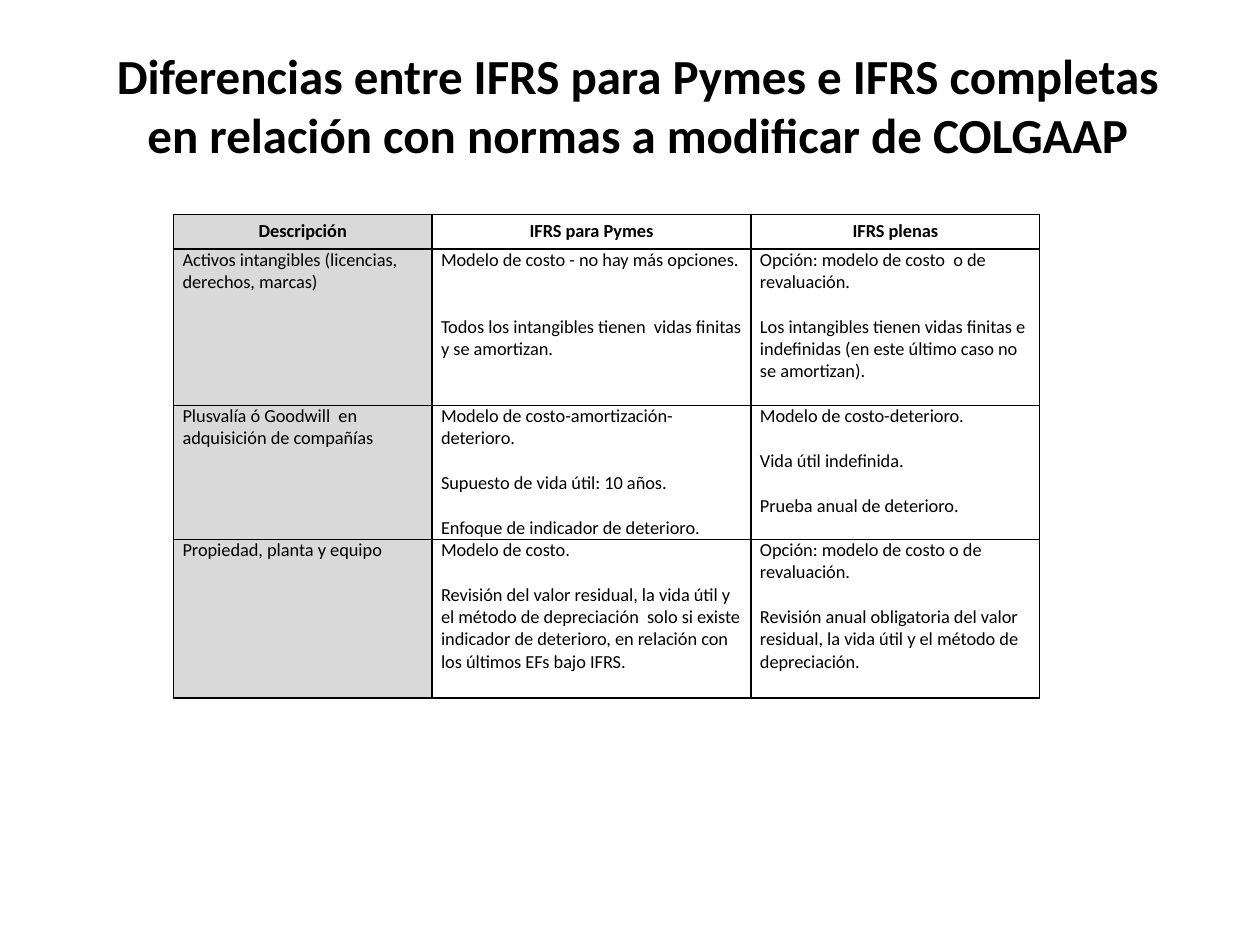
from dataclasses import dataclass

from lxml.etree import SubElement
from pptx import Presentation
from pptx.dml.color import RGBColor
from pptx.enum.text import MSO_ANCHOR, MSO_AUTO_SIZE, PP_ALIGN
from pptx.oxml.ns import qn
from pptx.util import Cm, Pt


@dataclass(frozen=True)
class Theme:
    font: str = "Calibri"
    ink: RGBColor = RGBColor(0x00, 0x00, 0x00)
    paper: RGBColor = RGBColor(0xFF, 0xFF, 0xFF)
    label: RGBColor = RGBColor(0xD9, 0xD9, 0xD9)
    title_size: Pt = Pt(28)
    cell_size: Pt = Pt(10.5)
    line_gap: Pt = Pt(12.8)
    border: Pt = Pt(1)


THEME = Theme()

TITLE = ("Diferencias entre IFRS para Pymes e IFRS completas\v"
         "en relación con normas a modificar de COLGAAP")
COLUMN_WIDTHS = (5.21, 6.43, 5.82)
ROW_HEIGHTS = (0.7, 3.15, 2.68, 3.2)
HEADINGS = ("Descripción", "IFRS para Pymes", "IFRS plenas")

# Each cell: blank lines between its paragraphs, then the paragraphs
COMPARISON = (
    ((0, "Activos intangibles (licencias, derechos, marcas)"),
     (2, "Modelo de costo - no hay más opciones.",
      "Todos los intangibles tienen  vidas finitas y se amortizan."),
     (1, "Opción: modelo de costo  o de revaluación.",
      "Los intangibles tienen vidas finitas e indefinidas "
      "(en este último caso no se amortizan).")),
    ((0, "Plusvalía ó Goodwill  en adquisición de compañías"),
     (1, "Modelo de costo-amortización-deterioro.",
      "Supuesto de vida útil: 10 años.",
      "Enfoque de indicador de deterioro."),
     (1, "Modelo de costo-deterioro.",
      "Vida útil indefinida.",
      "Prueba anual de deterioro.")),
    ((0, "Propiedad, planta y equipo"),
     (1, "Modelo de costo.",
      "Revisión del valor residual, la vida útil y el método de depreciación  "
      "solo si existe indicador de deterioro, en relación con los últimos "
      "EFs bajo IFRS."),
     (1, "Opción: modelo de costo o de revaluación.",
      "Revisión anual obligatoria del valor residual, la vida útil y el "
      "método de depreciación.")),
)


def style_font(para, size, bold):
    para.font.name = THEME.font
    para.font.size = size
    para.font.bold = bold
    para.font.color.rgb = THEME.ink


def add_borders(cell):
    properties = cell._tc.get_or_add_tcPr()
    for position, side in enumerate(("a:lnL", "a:lnR", "a:lnT", "a:lnB")):
        line = SubElement(properties, qn(side), w=str(THEME.border))
        properties.insert(position, line)
        fill = SubElement(line, qn("a:solidFill"))
        SubElement(fill, qn("a:srgbClr"), val=str(THEME.ink))


def fill_cell(cell, paragraphs, blank_lines, fill, heading):
    cell.margin_left = cell.margin_right = Cm(0.18)
    cell.margin_top = cell.margin_bottom = 0
    cell.vertical_anchor = MSO_ANCHOR.MIDDLE if heading else MSO_ANCHOR.TOP
    cell.fill.solid()
    cell.fill.fore_color.rgb = fill
    add_borders(cell)
    frame = cell.text_frame
    for index, text in enumerate(paragraphs):
        para = frame.add_paragraph() if index else frame.paragraphs[0]
        para.text = text
        para.alignment = PP_ALIGN.CENTER if heading else PP_ALIGN.LEFT
        if index:
            para.space_before = Pt(THEME.line_gap.pt * blank_lines)
        style_font(para, THEME.cell_size, heading)


def place_title(page, left, top, width, height):
    title = page.shapes.title
    title.left, title.top, title.width, title.height = left, top, width, height
    title.fill.solid()
    title.fill.fore_color.rgb = THEME.paper
    frame = title.text_frame
    frame.text = TITLE
    frame.word_wrap = True
    frame.auto_size = MSO_AUTO_SIZE.NONE
    frame.vertical_anchor = MSO_ANCHOR.MIDDLE
    para = frame.paragraphs[0]
    para.alignment = PP_ALIGN.CENTER
    style_font(para, THEME.title_size, True)


def place_comparison(page, left, top, width, height):
    table = page.shapes.add_table(len(ROW_HEIGHTS), len(COLUMN_WIDTHS),
                                  left, top, width, height).table
    table.first_row = table.horz_banding = False
    for column, share in zip(table.columns, COLUMN_WIDTHS):
        column.width = int(width * share / sum(COLUMN_WIDTHS))
    for row, share in zip(table.rows, ROW_HEIGHTS):
        row.height = int(height * share / sum(ROW_HEIGHTS))

    # Heading row first, then the compared items
    heading_row = tuple((0, text) for text in HEADINGS)
    for row, contents in enumerate((heading_row, *COMPARISON)):
        for column, (blank_lines, *paragraphs) in enumerate(contents):
            fill = THEME.paper if column else THEME.label
            fill_cell(table.cell(row, column), paragraphs, blank_lines,
                      fill, heading=row == 0)


def main():
    deck = Presentation()
    deck.slide_width, deck.slide_height = Cm(25.4), Cm(19.05)
    page = deck.slides.add_slide(deck.slide_layouts.get_by_name("Title Only"))
    place_title(page, Cm(0.89), Cm(0.53), Cm(23.93), Cm(3.15))
    place_comparison(page, Cm(3.5), Cm(4.32),
                     Cm(sum(COLUMN_WIDTHS)), Cm(sum(ROW_HEIGHTS)))
    deck.save("out.pptx")


if __name__ == "__main__":
    main()
